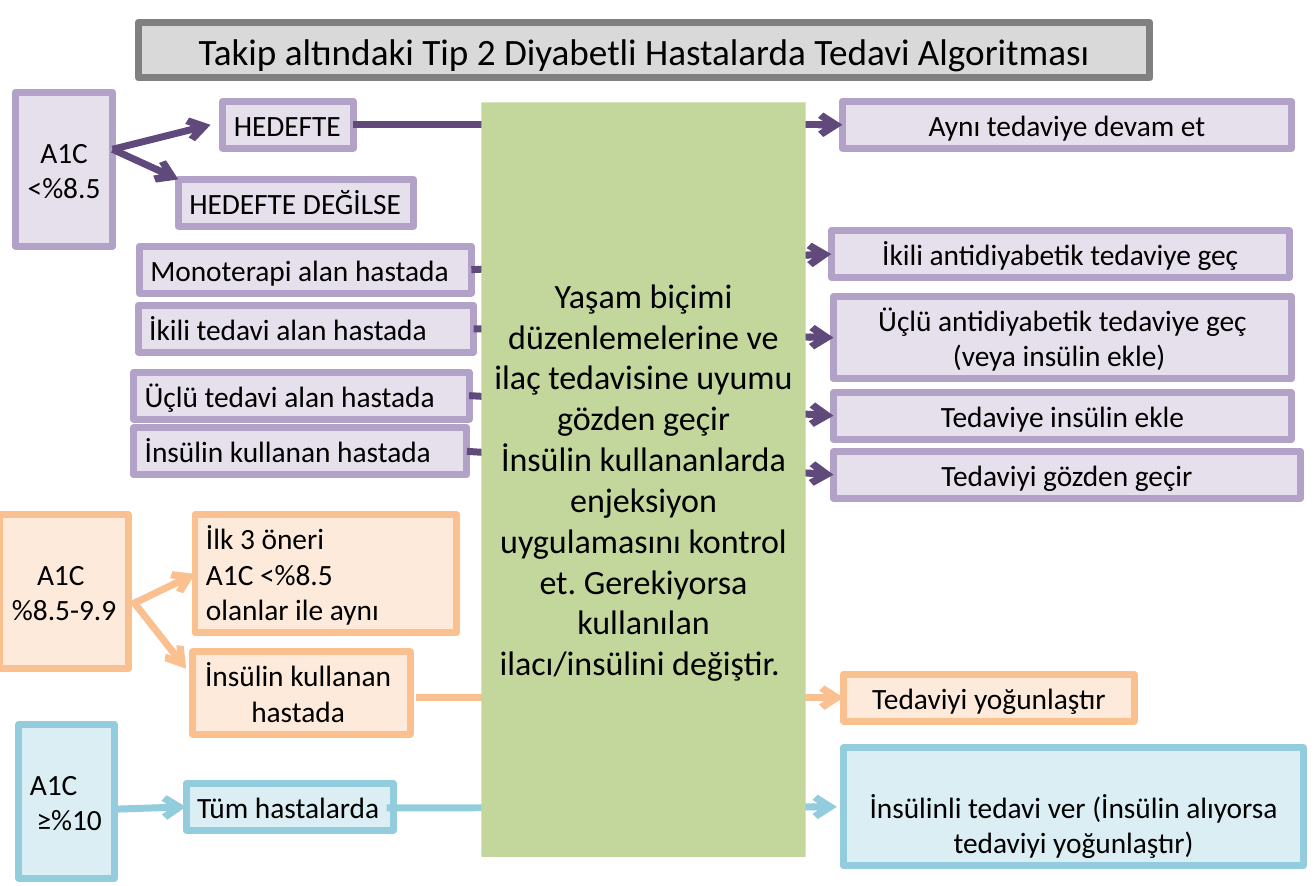
import dataclasses

import pptx
import pptx.dml.color
import pptx.enum.shapes
import pptx.enum.text
import pptx.oxml.ns
import pptx.util
from lxml import etree

Inches = pptx.util.Inches
LEFT = pptx.enum.text.PP_ALIGN.LEFT
CENTER = pptx.enum.text.PP_ALIGN.CENTER
LEFT_SIDE, RIGHT_SIDE = 1, 3


@dataclasses.dataclass(frozen=True)
class Palette:
    """Fill, outline and arrow colours of one region."""
    fill: str
    outline: str = ""
    arrow: str = ""


@dataclasses.dataclass(frozen=True)
class Theme:
    """Colours, type sizes and measures of the slide."""
    font: str = "Calibri"
    text: str = "000000"
    title_size: int = 24
    panel_size: int = 22
    label_size: int = 19
    line_width: float = 4.5
    row_height: float = 0.42
    two_rows: float = 0.74
    three_rows: float = 1.06
    level_height: float = 1.38
    padding: float = 0.05
    lowered: float = 0.37
    title: Palette = Palette("D9D9D9", "808080")
    panel: Palette = Palette("C3D69B")
    low: Palette = Palette("E6E0EC", "B3A2C7", "604A7B")
    middle: Palette = Palette("FDEADA", "FAC090", "FAC090")
    high: Palette = Palette("DBEEF4", "93CDDD", "93CDDD")


@dataclasses.dataclass(frozen=True)
class Box:
    """A rectangle in inches."""
    left: float
    top: float
    width: float
    height: float

    def inside(self, left, top, width, height):
        """Return a box placed relative to this one."""
        return Box(self.left + left, self.top + top, width, height)

    def point(self, left, top):
        """Return a point placed relative to this box."""
        return Inches(self.left + left), Inches(self.top + top)


THEME = Theme()


def color(value):
    """Turn a hex value into a colour."""
    return pptx.dml.color.RGBColor.from_string(value)


def style_shape(shape, palette):
    """Give a shape its fill and outline."""
    shape.fill.solid()
    shape.fill.fore_color.rgb = color(palette.fill)
    if palette.outline:
        shape.line.color.rgb = color(palette.outline)
        shape.line.width = pptx.util.Pt(THEME.line_width)
    else:
        shape.line.fill.background()


def write_text(shape, text, size, align, top=THEME.padding, wrap=True):
    """Write text into a shape and format it."""
    frame = shape.text_frame
    frame.text = text
    frame.word_wrap = wrap
    frame.vertical_anchor = pptx.enum.text.MSO_ANCHOR.TOP
    frame.margin_left = frame.margin_right = Inches(0.1)
    frame.margin_top, frame.margin_bottom = Inches(top), Inches(THEME.padding)
    for paragraph in frame.paragraphs:
        paragraph.alignment = align
        for run in paragraph.runs:
            run.font.name = THEME.font
            run.font.size = pptx.util.Pt(size)
            run.font.color.rgb = color(THEME.text)


def add_label(slide, box, palette, text, align=CENTER, size=THEME.label_size, **layout):
    """Add a rectangle with text."""
    shape = slide.shapes.add_shape(
        pptx.enum.shapes.MSO_SHAPE.RECTANGLE, Inches(box.left), Inches(box.top),
        Inches(box.width), Inches(box.height))
    shape.shadow.inherit = False
    style_shape(shape, palette)
    write_text(shape, text, size, align, **layout)
    return shape


def side_point(shape, side):
    """Return the middle of a shape's left or right side."""
    left = shape.left + (shape.width if side == RIGHT_SIDE else 0)
    return left, shape.top + shape.height // 2


def add_arrow(slide, palette, start, end):
    """Add an arrow between points, or from a right side to a left side."""
    from_shape = None if isinstance(start, tuple) else start
    to_shape = None if isinstance(end, tuple) else end
    begin = side_point(start, RIGHT_SIDE) if from_shape is not None else start
    finish = side_point(end, LEFT_SIDE) if to_shape is not None else end
    arrow = slide.shapes.add_connector(
        pptx.enum.shapes.MSO_CONNECTOR.STRAIGHT, *begin, *finish)
    if from_shape is not None:
        arrow.begin_connect(from_shape, RIGHT_SIDE)
    if to_shape is not None:
        arrow.end_connect(to_shape, LEFT_SIDE)
    arrow.line.color.rgb = color(palette.arrow)
    arrow.line.width = pptx.util.Pt(THEME.line_width)
    properties = arrow.line._get_or_add_ln()
    etree.SubElement(properties, pptx.oxml.ns.qn("a:tailEnd"), type="arrow")
    etree.SubElement(arrow._element.spPr, pptx.oxml.ns.qn("a:effectLst"))


def build_title(slide, box):
    """Place and format the slide title."""
    title = slide.shapes.title
    title.left, title.top = box.point(0, 0)
    title.width, title.height = Inches(box.width), Inches(box.height)
    style_shape(title, THEME.title)
    write_text(title, "Takip altındaki Tip 2 Diyabetli Hastalarda Tedavi Algoritması",
               THEME.title_size, CENTER)


def build_low_level(slide, box):
    """Build the region for A1C below 8.5 percent."""
    palette, row = THEME.low, THEME.row_height
    add_label(slide, box.inside(0, 0, 0.87, THEME.level_height), palette,
              "A1C <%8.5", top=THEME.lowered)
    on_target = add_label(slide, box.inside(1.86, 0.08, 1.17, row), palette,
                          "HEDEFTE", LEFT, wrap=False)
    add_label(slide, box.inside(1.46, 0.78, 2.11, row), palette,
              "HEDEFTE DEĞİLSE", LEFT, wrap=False)
    same = add_label(slide, box.inside(7.42, 0.08, 4.03, row), palette, "Aynı tedaviye devam et")
    for target in ((1.75, 0.29), (1.46, 0.78)):
        add_arrow(slide, palette, box.point(0.87, 0.51), box.point(*target))
    add_arrow(slide, palette, on_target, same)
    steps = (
        ((1.11, 1.38, 2.98, row), "Monoterapi alan hastada",
         (7.32, 1.24, 4.11, row), "İkili antidiyabetik tedaviye geç"),
        ((1.1, 1.91, 3.01, row), "İkili tedavi alan hastada",
         (7.34, 1.83, 4.11, THEME.two_rows),
         "Üçlü antidiyabetik tedaviye geç\v(veya insülin ekle) "),
        ((1.06, 2.51, 3.01, row), "Üçlü tedavi alan hastada",
         (7.34, 2.69, 4.11, row), "Tedaviye insülin ekle"),
        ((1.06, 3.01, 2.99, row), "İnsülin kullanan hastada",
         (7.34, 3.22, 4.19, row), "Tedaviyi gözden geçir"),
    )
    for patient_place, patient_text, action_place, action_text in steps:
        patient = add_label(slide, box.inside(*patient_place), palette, patient_text, LEFT)
        action = add_label(slide, box.inside(*action_place), palette, action_text)
        add_arrow(slide, palette, patient, action)


def build_middle_level(slide, box):
    """Build the region for A1C from 8.5 to 9.9 percent."""
    palette = THEME.middle
    add_label(slide, box.inside(0, 0, 1.15, THEME.level_height), palette,
              "A1C \n%8.5-9.9", top=THEME.lowered, wrap=False)
    advice = add_label(slide, box.inside(1.75, 0, 2.35, THEME.three_rows), palette,
                       "İlk 3 öneri\nA1C <%8.5\nolanlar ile aynı", LEFT)
    add_label(slide, box.inside(1.73, 1.23, 1.95, THEME.two_rows), palette,
              "İnsülin kullanan \nhastada ", wrap=False)
    intensify = add_label(slide, box.inside(7.57, 1.43, 2.61, THEME.row_height), palette,
                          "Tedaviyi yoğunlaştır")
    add_arrow(slide, palette, box.point(1.19, 0.8), advice)
    add_arrow(slide, palette, box.point(1.19, 0.77), box.point(1.67, 1.38))
    add_arrow(slide, palette, box.point(3.73, 1.64), intensify)


def build_high_level(slide, box):
    """Build the region for A1C of 10 percent and above."""
    palette = THEME.high
    level = add_label(slide, box.inside(0, 0, 0.86, THEME.level_height), palette,
                      "A1C\n≥%10", LEFT, top=THEME.lowered)
    level.text_frame.margin_right = 0
    level.text_frame.paragraphs[1]._p.get_or_add_pPr().set("marL", str(Inches(0.06)))
    everyone = add_label(slide, box.inside(1.5, 0.53, 1.86, THEME.row_height), palette,
                         "Tüm hastalarda", LEFT, wrap=False)
    add_label(slide, box.inside(7.4, 0.21, 4.13, THEME.three_rows), palette,
              "İnsülinli tedavi ver (İnsülin alıyorsa tedaviyi yoğunlaştır)", top=THEME.lowered)
    add_arrow(slide, palette, box.point(3.3, 0.75), box.point(7.34, 0.74))
    add_arrow(slide, palette, box.point(0.89, 0.76), everyone)


def build_review_panel(slide, box):
    """Build the central panel that every path crosses."""
    add_label(slide, box, THEME.panel,
              "Yaşam biçimi düzenlemelerine ve ilaç tedavisine uyumu gözden geçir\n"
              "İnsülin kullananlarda enjeksiyon uygulamasını kontrol et. "
              "Gerekiyorsa kullanılan ilacı/insülini değiştir. ",
              size=THEME.panel_size, top=1.54)


def main():
    """Build and save the presentation."""
    presentation = pptx.Presentation()
    presentation.slide_width, presentation.slide_height = Inches(11.81), Inches(7.95)
    slide = presentation.slides.add_slide(presentation.slide_layouts[5])
    build_title(slide, Box(1.24, 0.2, 9.08, 0.5))
    build_low_level(slide, Box(0.14, 0.83, 11.53, 3.64))
    build_middle_level(slide, Box(0, 4.62, 10.18, 1.97))
    build_high_level(slide, Box(0.17, 6.5, 11.53, 1.38))
    build_review_panel(slide, Box(4.32, 0.92, 2.91, 6.77))
    presentation.save("out.pptx")


if __name__ == "__main__":
    main()
